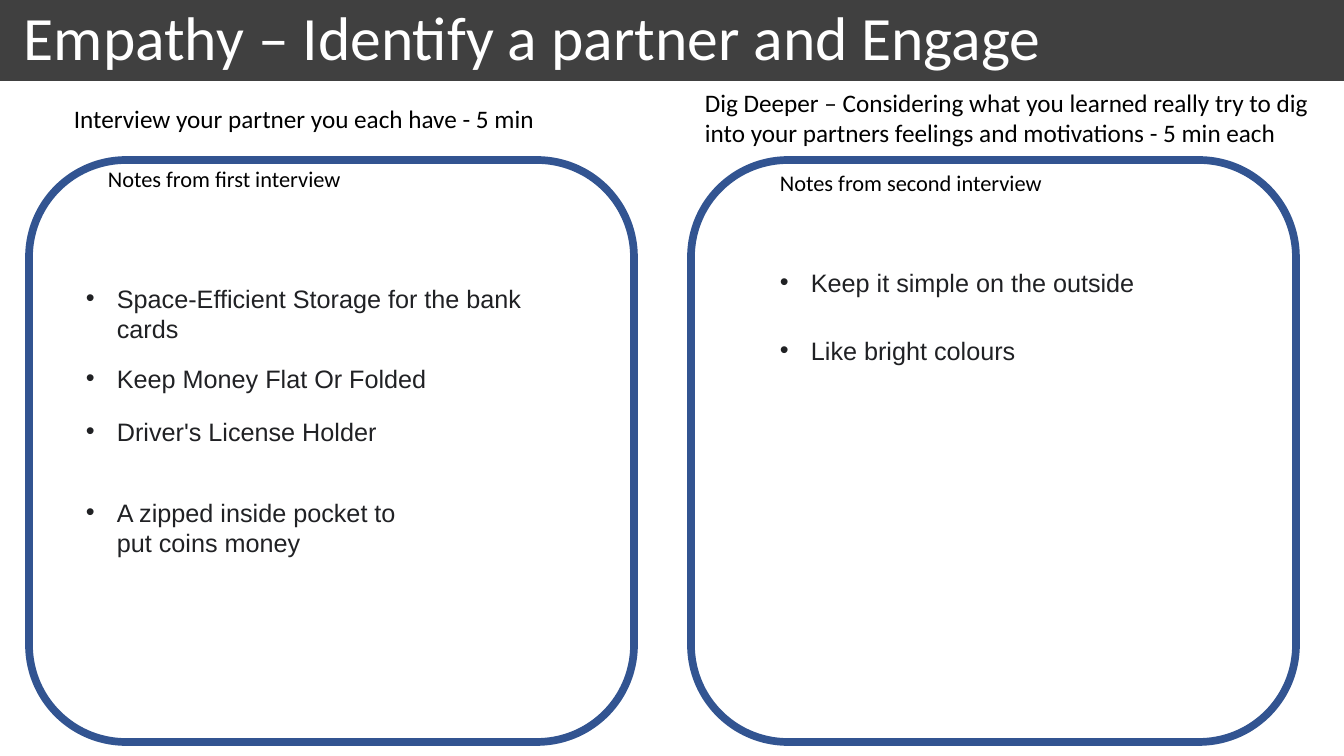
from pptx import Presentation
from pptx.dml.color import RGBColor
from pptx.enum.shapes import MSO_SHAPE
from pptx.enum.text import MSO_ANCHOR
from pptx.oxml.ns import qn
from pptx.util import Emu, Pt
from lxml import etree

RECTANGLE = MSO_SHAPE.RECTANGLE
ROUNDED = MSO_SHAPE.ROUNDED_RECTANGLE
TOP, MIDDLE = MSO_ANCHOR.TOP, MSO_ANCHOR.MIDDLE
PX_PER_INCH = 100.8
PAGE_WIDTH, PAGE_HEIGHT = 1344, 756
BAR_HEIGHT = 81


def px(length):
    return Emu(round(length * 914400 / PX_PER_INCH))


def color(hex_string):
    return RGBColor.from_string(hex_string)


class Page:
    HEADING_FONT, NOTE_FONT = "Calibri", "Arial"
    WHITE, BLACK, BAR, FRAME, NOTE = "FFFFFF", "000000", "404040", "325491", "202124"
    BULLET_INDENT = 31

    def __init__(self, deck):
        self.slide = deck.slides.add_slide(deck.slide_layouts[6])

    def shape(self, kind, left, top, width, height):
        shape = self.slide.shapes.add_shape(kind, px(left), px(top), px(width), px(height))
        shape.shadow.inherit = False
        return shape

    def bar(self, left, top, width, height):
        bar = self.shape(RECTANGLE, left, top, width, height)
        bar.fill.solid()
        bar.fill.fore_color.rgb = color(self.BAR)
        bar.line.fill.background()

    def frame(self, left, top, width, height):
        frame = self.shape(ROUNDED, left, top, width, height)
        frame.fill.background()
        frame.line.color.rgb = color(self.FRAME)
        frame.line.width = Pt(5.5)

    def text(self, words, left, top, width, height, size=18,
             font=HEADING_FONT, ink=BLACK, anchor=TOP):
        """Add a one-paragraph text box and return its paragraph."""
        box = self.slide.shapes.add_textbox(px(left), px(top), px(width), px(height))
        frame = box.text_frame
        frame.word_wrap = True
        frame.vertical_anchor = anchor
        para = frame.paragraphs[0]
        span = para.add_run()
        span.text = words
        span.font.size = Pt(size)
        span.font.name = font
        span.font.color.rgb = color(ink)
        return para

    def title(self, words):
        para = self.text(words, 0, 0, PAGE_WIDTH, BAR_HEIGHT, 44, ink=self.WHITE, anchor=MIDDLE)
        para.line_spacing = 0.9

    def bullet(self, words, left, top, width, height=40):
        para = self.text(words, left, top, width, height, font=self.NOTE_FONT, ink=self.NOTE)
        properties = para._p.get_or_add_pPr()
        properties.set("marL", str(px(self.BULLET_INDENT)))
        properties.set("indent", str(-px(self.BULLET_INDENT)))
        etree.SubElement(properties, qn("a:buFont")).set("typeface", self.NOTE_FONT)
        etree.SubElement(properties, qn("a:buChar")).set("char", "•")


def main():
    deck = Presentation()
    deck.slide_width, deck.slide_height = px(PAGE_WIDTH), px(PAGE_HEIGHT)
    page = Page(deck)

    page.bar(0, 0, PAGE_WIDTH, BAR_HEIGHT)
    page.title(" Empathy – Identify a partner and Engage")

    for frame_left in (29, 691):
        page.frame(frame_left, 160, 605, 582)

    page.text("Interview your partner you each have - 5 min", 64, 98, 586, 40)
    page.text("Dig Deeper – Considering what you learned really try to dig "
              "into your partners feelings and motivations - 5 min each", 695, 82, 633, 72)
    page.text("Notes from first interview", 98, 160, 341, 37, size=16)
    page.text("Notes from second interview", 770, 164, 341, 37, size=16)

    first_notes = [
        ("Space-Efficient Storage for the bank cards", 278, 520, 72),
        ("Keep Money Flat Or Folded", 358, 453, 40),
        ("Driver's License Holder", 411, 498, 40),
        ("A zipped inside pocket to put coins money", 492, 364, 72),
    ]
    for words, top, width, height in first_notes:
        page.bullet(words, 76, top, width, height)

    second_notes = [("Keep it simple on the outside", 262), ("Like bright colours", 330)]
    for words, top in second_notes:
        page.bullet(words, 770, top, 498)

    deck.save("out.pptx")


if __name__ == "__main__":
    main()
